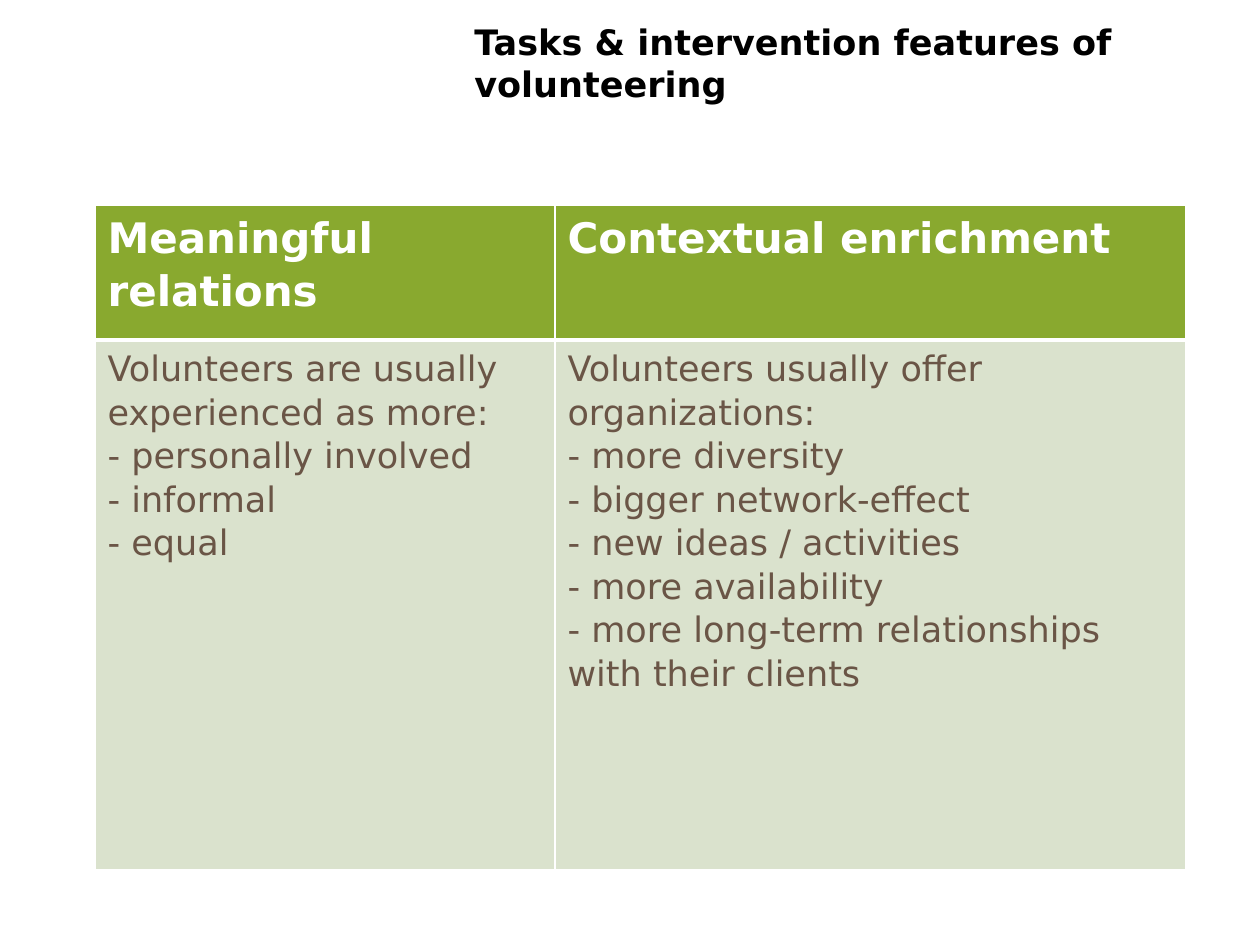
from dataclasses import dataclass

from lxml.etree import SubElement
from pptx import Presentation
from pptx.dml.color import RGBColor
from pptx.enum.text import MSO_ANCHOR
from pptx.oxml.ns import qn
from pptx.util import Emu, Pt

TITLE = "Tasks & intervention features of volunteering"
COLUMNS = [
    ("Meaningful relations", [
        "Volunteers are usually experienced as more:",
        "- personally involved",
        "- informal",
        "- equal",
    ]),
    ("Contextual enrichment", [
        "Volunteers usually offer organizations:",
        "- more diversity",
        "- bigger network-effect",
        "- new ideas / activities",
        "- more availability",
        "- more long-term relationships with their clients",
    ]),
]
PAGE_SIZE = (1260, 945)
TITLE_BOX = (462, 21, 703, 124)
TABLE_ORIGIN = (95, 205)
COLUMN_WIDTHS = (460, 631)
ROW_HEIGHTS = (135, 530)


@dataclass(frozen=True)
class Theme:
    font: str = "DejaVu Sans"
    title_color: str = "000000"
    header_color: str = "FFFFFF"
    body_color: str = "6A5546"
    header_fill: str = "89A92F"
    body_fill: str = "DAE2CD"
    border: str = "FFFFFF"
    title_size: int = 20
    header_size: int = 24
    body_size: int = 20
    cell_spacing: float = 1.07
    thin: int = 1
    thick: int = 3


THEME = Theme()


def px(length):
    return Emu(round(length * 914400 / 126))


def write(frame, lines, size, color, bold, spacing=1.0):
    frame.word_wrap = True
    for index, line in enumerate(lines):
        para = frame.add_paragraph() if index else frame.paragraphs[0]
        para.line_spacing = spacing
        span = para.add_run()
        span.text = line
        span.font.name = THEME.font
        span.font.size = Pt(size)
        span.font.bold = bold
        span.font.color.rgb = RGBColor.from_string(color)


def set_borders(cell, top, bottom):
    properties = cell._tc.get_or_add_tcPr()
    widths = {"lnL": THEME.thin, "lnR": THEME.thin, "lnT": top, "lnB": bottom}
    for side, width in widths.items():
        line = SubElement(properties, qn(f"a:{side}"), w=str(Pt(width)))
        fill = SubElement(line, qn("a:solidFill"))
        SubElement(fill, qn("a:srgbClr"), val=THEME.border)


def fill_cell(cell, color):
    cell.fill.solid()
    cell.fill.fore_color.rgb = RGBColor.from_string(color)


def add_title(page):
    box = page.shapes.add_textbox(*map(px, TITLE_BOX))
    frame = box.text_frame
    frame.vertical_anchor = MSO_ANCHOR.TOP
    frame.margin_top = 0
    write(frame, [TITLE], THEME.title_size, THEME.title_color, True)


def add_comparison(page):
    size = (sum(COLUMN_WIDTHS), sum(ROW_HEIGHTS))
    table = page.shapes.add_table(
        len(ROW_HEIGHTS), len(COLUMNS), *map(px, TABLE_ORIGIN + size)
    ).table
    for row, height in zip(table.rows, ROW_HEIGHTS):
        row.height = px(height)
    for index, (heading, points) in enumerate(COLUMNS):
        table.columns[index].width = px(COLUMN_WIDTHS[index])
        header, body = table.cell(0, index), table.cell(1, index)
        set_borders(header, THEME.thin, THEME.thick)
        set_borders(body, THEME.thick, THEME.thin)
        fill_cell(header, THEME.header_fill)
        fill_cell(body, THEME.body_fill)
        write(header.text_frame, [heading], THEME.header_size,
              THEME.header_color, True, THEME.cell_spacing)
        write(body.text_frame, points, THEME.body_size,
              THEME.body_color, False, THEME.cell_spacing)


def main():
    deck = Presentation()
    deck.slide_width, deck.slide_height = map(px, PAGE_SIZE)
    page = deck.slides.add_slide(deck.slide_layouts[6])
    add_title(page)
    add_comparison(page)
    deck.save("out.pptx")


if __name__ == "__main__":
    main()
